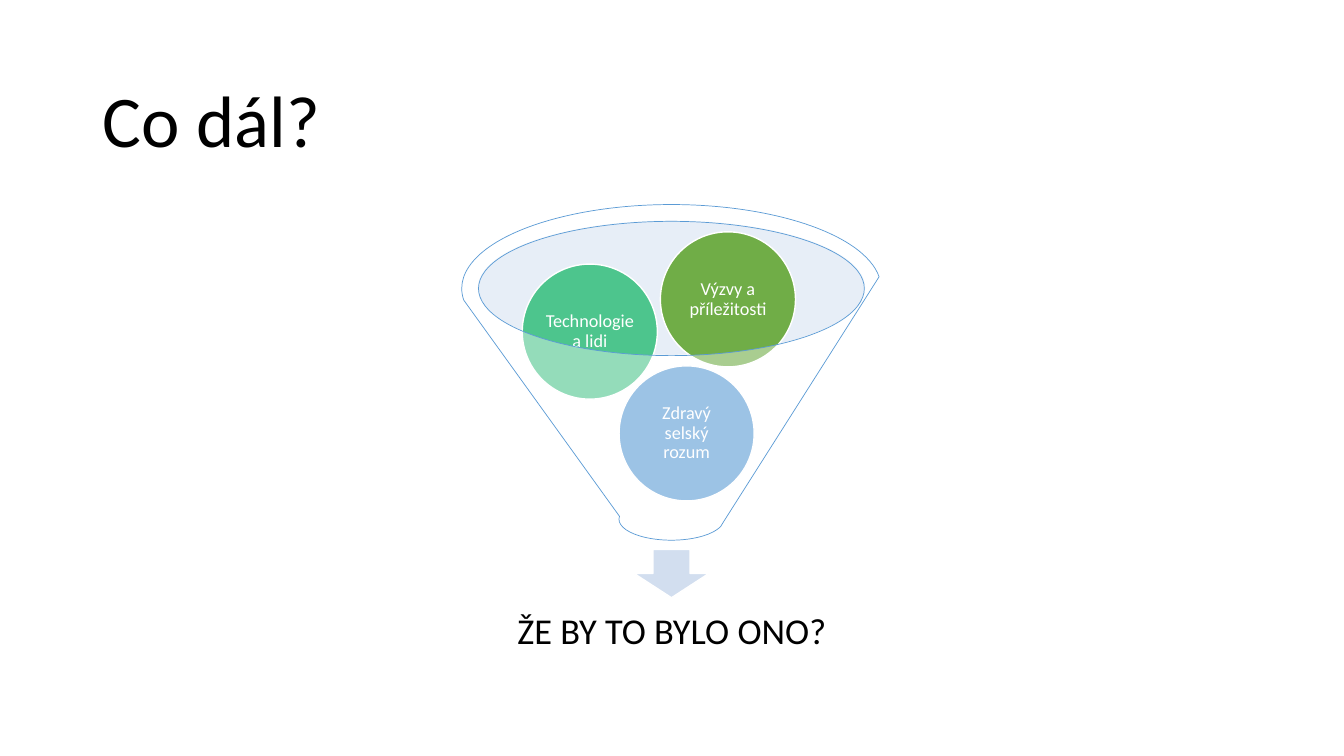
"""Build the funnel slide."""
import lxml.etree
import pptx
import pptx.dml.color
import pptx.enum.shapes
import pptx.enum.text
import pptx.oxml.ns
import pptx.util

Inches = pptx.util.Inches
RGB = pptx.dml.color.RGBColor
KIND = pptx.enum.shapes.MSO_SHAPE
ALIGN = pptx.enum.text.PP_ALIGN
MIDDLE = pptx.enum.text.MSO_ANCHOR.MIDDLE

BLACK = RGB(0x00, 0x00, 0x00)
WHITE = RGB(0xFF, 0xFF, 0xFF)
BLUE = RGB(0x5B, 0x9B, 0xD5)
TEAL = RGB(0x4D, 0xC5, 0x8D)
GREEN = RGB(0x70, 0xAD, 0x47)
PALE = RGB(0xC4, 0xD5, 0xEB)
MIST = RGB(0xD2, 0xDE, 0xEF)

BALL = 1.34
BALLS = [
    ("Zdravý selský rozum", 6.14, 3.63, BLUE),
    ("Technologie a lidi", 5.18, 2.62, TEAL),
    ("Výzvy a příležitosti", 6.55, 2.3, GREEN),
]


def write(shape, text, size, color, align, inset):
    """Set and format the text of a shape."""
    frame = shape.text_frame
    frame.text = text
    frame.word_wrap = True
    frame.vertical_anchor = MIDDLE
    frame.margin_left = frame.margin_right = Inches(inset)
    frame.margin_top = frame.margin_bottom = Inches(inset)
    line = frame.paragraphs[0]
    line.alignment = align
    line.line_spacing = 0.9
    font = line.runs[0].font
    font.name = "Calibri"
    font.size = pptx.util.Pt(size)
    font.color.rgb = color


def draw(slide, kind, box, fill, edge=None, width=1, alpha=None):
    """Add a filled preset shape, with an optional edge and opacity."""
    shape = slide.shapes.add_shape(kind, *map(Inches, box))
    shape.shadow.inherit = False
    shape.fill.solid()
    shape.fill.fore_color.rgb = fill
    if alpha is not None:
        tone = shape.fill._xPr.find(".//" + pptx.oxml.ns.qn("a:srgbClr"))
        node = lxml.etree.SubElement(tone, pptx.oxml.ns.qn("a:alpha"))
        node.set("val", str(alpha * 1000))
    if edge is None:
        shape.line.fill.background()
    else:
        shape.line.color.rgb = edge
        shape.line.width = pptx.util.Pt(width)
    return shape


def head(slide, text):
    """Place and fill the title."""
    title = slide.shapes.title
    title.left, title.top = Inches(0.92), Inches(0.61)
    title.width, title.height = Inches(11.5), Inches(1.24)
    write(title, text, 52, BLACK, ALIGN.LEFT, 0.1)


def label(slide, text, box):
    """Add the caption below the funnel."""
    shape = slide.shapes.add_textbox(*map(Inches, box))
    write(shape, text, 26, BLACK, ALIGN.CENTER, 0.2)


def main():
    """Build and save the slide."""
    deck = pptx.Presentation()
    deck.slide_width, deck.slide_height = Inches(13.33), Inches(7.5)
    slide = deck.slides.add_slide(deck.slide_layouts[5])
    head(slide, "Co dál?")
    draw(slide, KIND.OVAL, (4.74, 2.19, 3.84, 1.33), PALE, alpha=40)
    draw(slide, KIND.DOWN_ARROW, (6.29, 5.45, 0.74, 0.48), MIST, WHITE)
    label(slide, "ŽE BY TO BYLO ONO?", (4.88, 5.83, 3.57, 0.89))
    for text, left, top, color in BALLS:
        ball = draw(slide, KIND.OVAL, (left, top, BALL, BALL), color, WHITE)
        write(ball, text, 13, WHITE, ALIGN.CENTER, 0.02)
    draw(slide, KIND.FUNNEL, (4.58, 2.03, 4.16, 3.33), WHITE, BLUE, 0.5, 40)
    deck.save("out.pptx")


if __name__ == "__main__":
    main()
